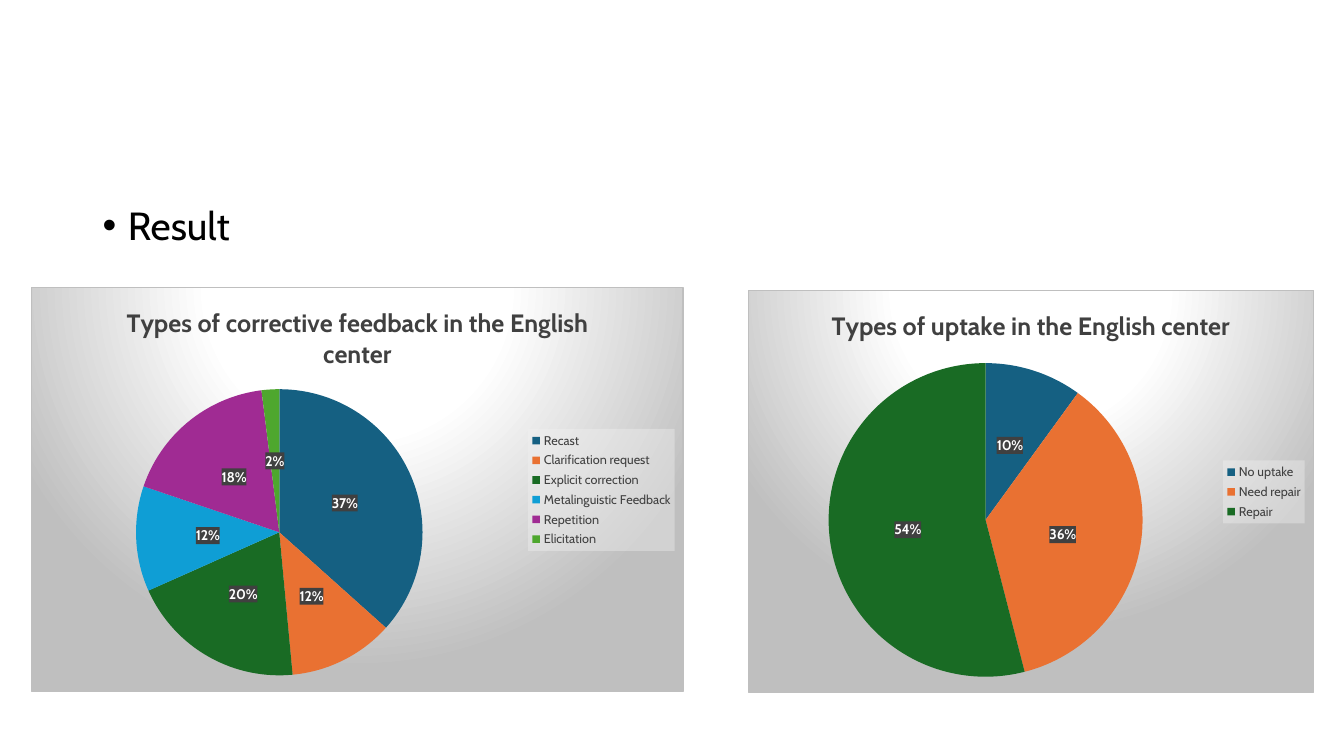
from lxml.etree import fromstring
from pptx import Presentation
from pptx.chart.data import CategoryChartData
from pptx.dml.color import RGBColor
from pptx.enum.chart import XL_CHART_TYPE, XL_LABEL_POSITION, XL_LEGEND_POSITION
from pptx.util import Inches, Pt

COLORS = {
    "black": "000000", "white": "FFFFFF", "text": "404040", "edge": "BFBFBF",
    "label": "404040", "key": "F2F2F2",
}
SLICES = ["156082", "E97132", "196B24", "0F9ED5", "A02B93", "4EA72E"]
A = "http://schemas.openxmlformats.org/drawingml/2006/main"
C = "http://schemas.openxmlformats.org/drawingml/2006/chart"


def node(xml):
    """Turn a fragment into an element, adding the namespaces."""
    head, tail = xml.split(">", 1)
    slash = "/" if head.endswith("/") else ""
    return fromstring(f'{head.rstrip("/")} xmlns:a="{A}" xmlns:c="{C}"{slash}>{tail}')


def style(font, size, color, bold=False):
    font.name, font.size, font.bold = "Cabin", Pt(size), bold
    font.color.rgb = RGBColor.from_string(COLORS[color])


def write(frame, text, size=18, color="text", bold=False, bullet=None):
    """Put one formatted paragraph in a text frame."""
    para = frame.paragraphs[0]
    if bullet:
        props = para._p.get_or_add_pPr()
        props.set("marL", str(Inches(0.25)))
        props.set("indent", str(-Inches(0.25)))
        props.append(node('<a:buFont typeface="Arial"/>'))
        props.append(node(f'<a:buChar char="{bullet}"/>'))
        para.line_spacing = 0.9
    run = para.add_run()
    run.text = text
    style(run.font, size, color, bold)


def solid(color, alpha):
    return (f'<a:solidFill><a:srgbClr val="{COLORS[color]}">'
            f'<a:alpha val="{alpha * 1000}"/></a:srgbClr></a:solidFill>')


def glow():
    """Radial background with a thin border."""
    stops = "".join(
        f'<a:gs pos="{pos * 1000}"><a:srgbClr val="{COLORS[name]}"/></a:gs>'
        for pos, name in [(0, "white"), (39, "white"), (100, "edge")])
    return (f'<a:gradFill><a:gsLst>{stops}</a:gsLst><a:path path="circle">'
            '<a:fillToRect l="50000" t="-80000" r="50000" b="180000"/></a:path></a:gradFill>'
            f'<a:ln w="{Pt(0.75)}">{solid("edge", 100)}</a:ln>')


def paint(part, fill):
    """Fill a chart part that already has text properties."""
    part.find(f"{{{C}}}txPr").addprevious(node(f"<c:spPr>{fill}</c:spPr>"))


class Deck:
    def __init__(self):
        self.prs = Presentation()
        self.prs.slide_width, self.prs.slide_height = Inches(13.33), Inches(7.5)
        self.slide = self.prs.slides.add_slide(self.prs.slide_layouts[6])

    def place(self, left, top, width, height):
        """Convert percentages of the slide to lengths."""
        wide, high = self.prs.slide_width, self.prs.slide_height
        return [int(share * size / 100) for share, size in
                zip((left, top, width, height), (wide, high, wide, high))]

    def text(self, area, text, **form):
        frame = self.slide.shapes.add_textbox(*self.place(*area)).text_frame
        frame.word_wrap = True
        write(frame, text, **form)

    def pie(self, area, title, values, plot_area):
        data = CategoryChartData()
        data.categories = list(values)
        data.add_series("Series 1", list(values.values()))
        chart = self.slide.shapes.add_chart(
            XL_CHART_TYPE.PIE, *self.place(*area), data).chart
        style(chart.font, 10, "black")
        paint(chart._chartSpace, glow())

        # Title and legend
        chart.has_title = True
        write(chart.chart_title.text_frame, title, bold=True)
        chart.chart_title.include_in_layout = False
        chart.has_legend = True
        legend = chart.legend
        legend.position = XL_LEGEND_POSITION.RIGHT
        legend.include_in_layout = False
        style(legend.font, 9, "text")
        paint(legend._element, solid("key", 39))

        # Slices and labels
        plot = chart.plots[0]
        plot.vary_by_categories = True
        for spot, color in enumerate(SLICES[:len(values)]):
            fill = plot.series[0].points[spot].format.fill
            fill.solid()
            fill.fore_color.rgb = RGBColor.from_string(color)
        labels = plot.series[0].data_labels
        labels.show_percentage, labels.show_value = True, False
        labels.number_format, labels.number_format_is_linked = "0%", False
        labels.position = XL_LABEL_POSITION.CENTER
        style(labels.font, 10, "white", bold=True)
        paint(labels._element, solid("label", 90))

        # Place of the pie within its chart
        zone = plot._element.getparent()
        for old in zone.findall(f"{{{C}}}layout"):
            zone.remove(old)
        modes = '<c:xMode val="edge"/><c:yMode val="edge"/>'
        sizes = "".join(f'<c:{key} val="{val}"/>' for key, val in zip("xywh", plot_area))
        zone.insert(0, node('<c:layout><c:manualLayout><c:layoutTarget val="inner"/>'
                            f"{modes}{sizes}</c:manualLayout></c:layout>"))


def main():
    deck = Deck()
    # Heading
    deck.text((6.9, 26.67, 86.25, 8), "Result", size=28, color="black", bullet="•")
    # Feedback chart
    deck.pie((2.33, 38, 48.53, 53.6), "Types of corrective feedback in the English center",
             {"Recast": 37, "Clarification request": 12, "Explicit correction": 20,
              "Metalinguistic Feedback": 12, "Repetition": 18, "Elicitation": 2},
             (0.16, 0.25, 0.44, 0.71))
    # Uptake chart
    deck.pie((55.66, 38.4, 42.08, 53.33), "Types of uptake in the English center",
             {"No uptake": 10, "Need repair": 36, "Repair": 54},
             (0.14, 0.18, 0.56, 0.78))
    deck.prs.save("out.pptx")


if __name__ == "__main__":
    main()
